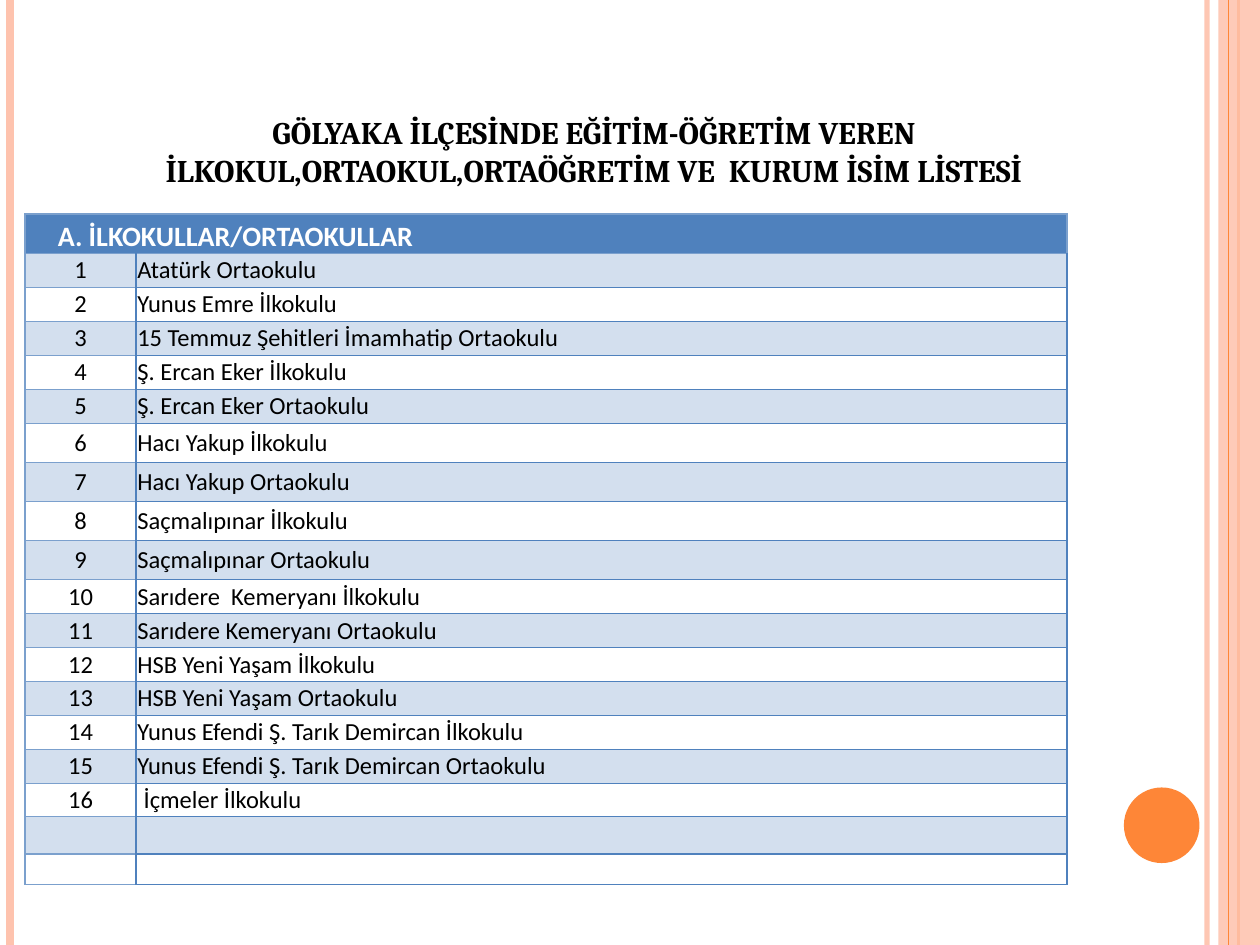
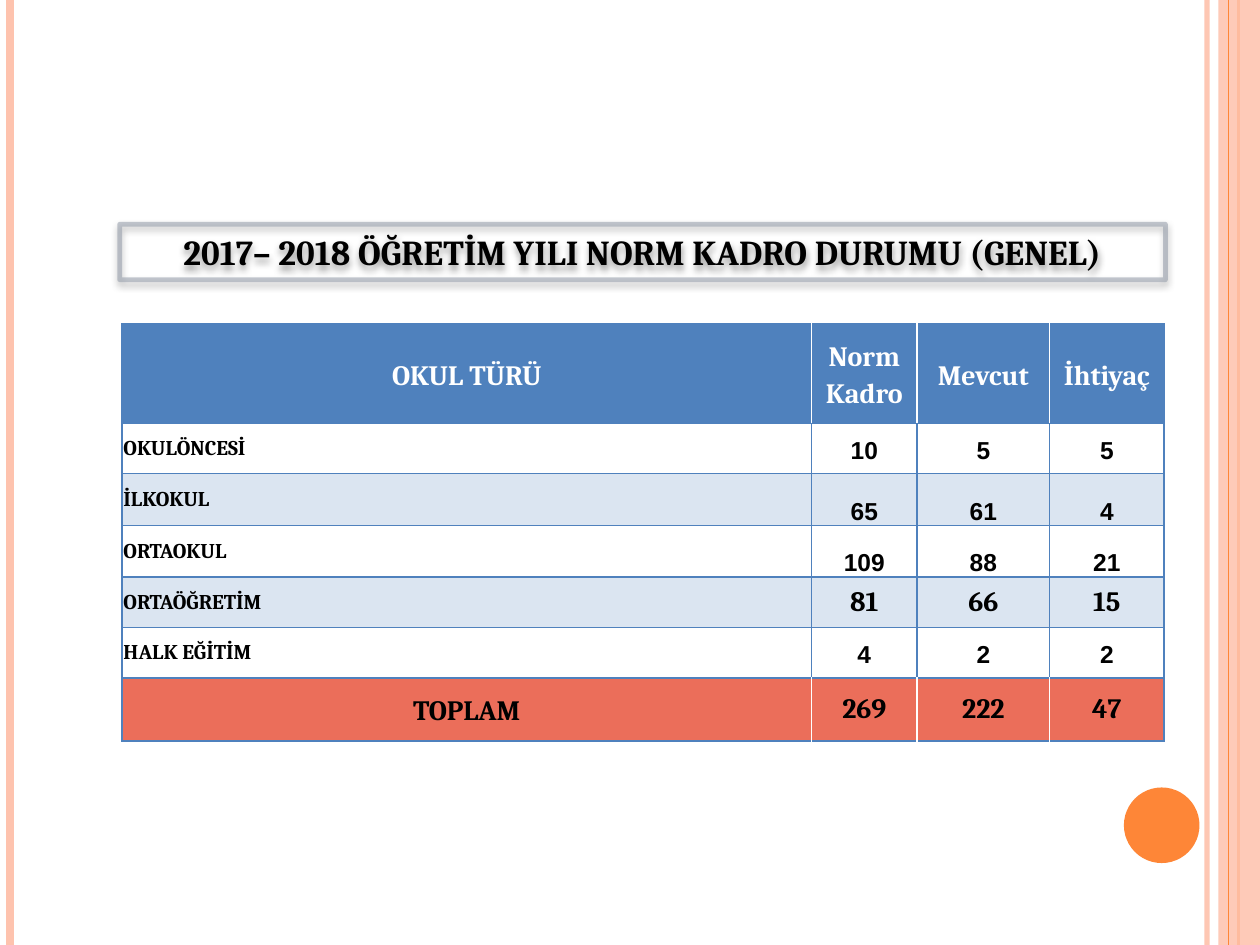
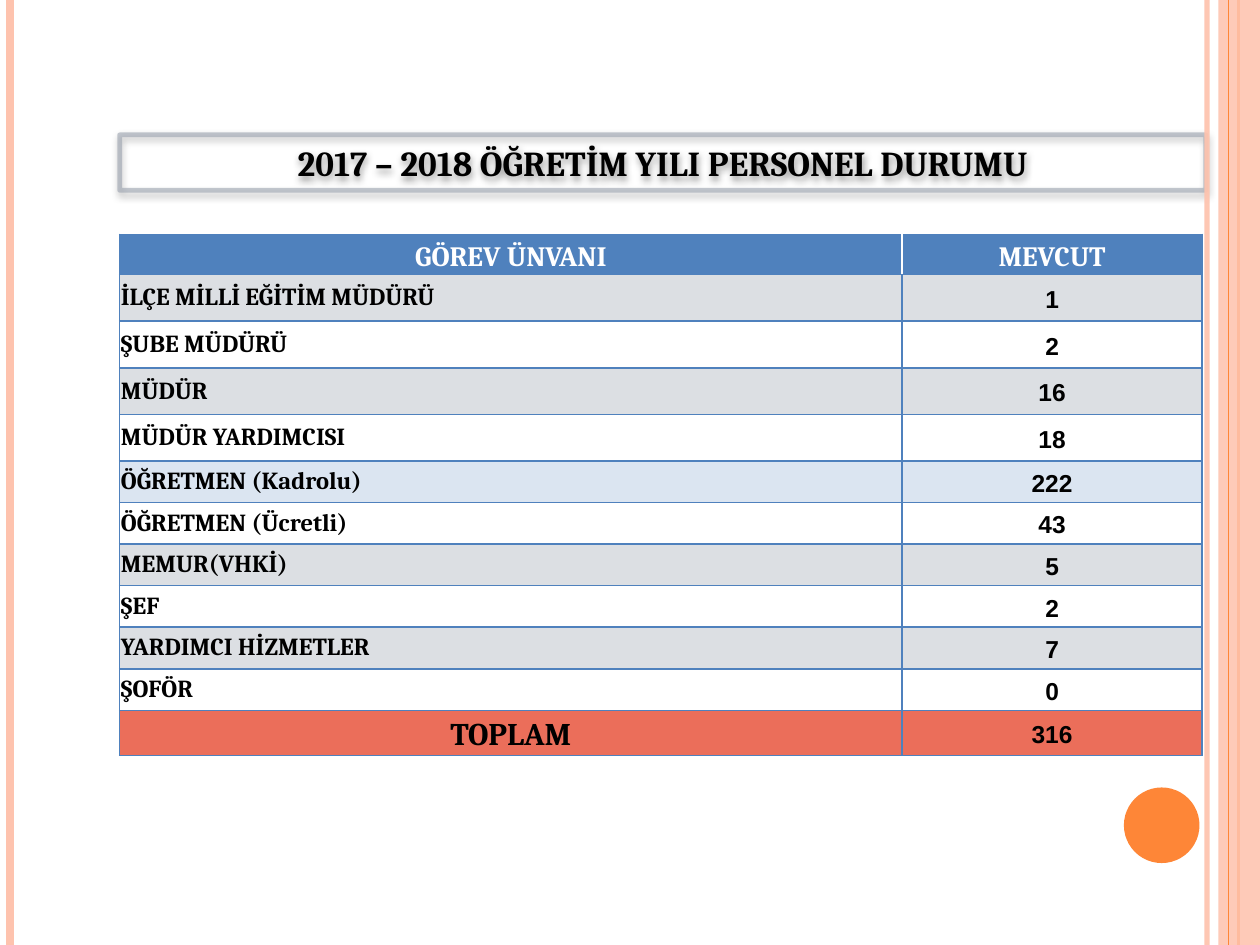
from dataclasses import dataclass

from lxml import etree
from pptx import Presentation
from pptx.dml.color import RGBColor
from pptx.enum.shapes import MSO_CONNECTOR, MSO_SHAPE
from pptx.enum.text import MSO_ANCHOR, MSO_AUTO_SIZE, PP_ALIGN
from pptx.oxml import parse_xml
from pptx.oxml.ns import nsdecls, qn
from pptx.util import Inches, Pt

STRAIGHT = MSO_CONNECTOR.STRAIGHT
RECTANGLE, OVAL = MSO_SHAPE.RECTANGLE, MSO_SHAPE.OVAL
LEFT, CENTER = PP_ALIGN.LEFT, PP_ALIGN.CENTER
MIDDLE, BOTTOM = MSO_ANCHOR.MIDDLE, MSO_ANCHOR.BOTTOM
FIXED_SIZE = MSO_AUTO_SIZE.NONE
TITLE_ONLY = 5

ORANGE, PEACH = "FE8637", "FEC3AE"
BLACK, WHITE = "000000", "FFFFFF"
BLUE, SOFT_BLUE = "4F81BD", "7BA0CD"
BAND_BLUE, PALE_BLUE, PALE_GRAY = "D3DFEE", "DBE5F1", "DCDFE3"
TOTAL_RED, FRAME_GRAY = "EB6E5A", "969EAB"

SCHOOLS = [
    "Atatürk Ortaokulu", "Yunus Emre İlkokulu",
    "15 Temmuz Şehitleri İmamhatip Ortaokulu",
    "Ş. Ercan Eker İlkokulu", "Ş. Ercan Eker Ortaokulu",
    "Hacı Yakup İlkokulu", "Hacı Yakup Ortaokulu",
    "Saçmalıpınar İlkokulu", "Saçmalıpınar Ortaokulu",
    "Sarıdere  Kemeryanı İlkokulu", "Sarıdere Kemeryanı Ortaokulu",
    "HSB Yeni Yaşam İlkokulu", "HSB Yeni Yaşam Ortaokulu",
    "Yunus Efendi Ş. Tarık Demircan İlkokulu",
    "Yunus Efendi Ş. Tarık Demircan Ortaokulu",
    "İçmeler İlkokulu",
]
STAFF_NORMS = [
    ("OKULÖNCESİ", 10, 5, 5),
    ("İLKOKUL", 65, 61, 4),
    ("ORTAOKUL", 109, 88, 21),
    ("ORTAÖĞRETİM", 81, 66, 15),
    ("HALK EĞİTİM", 4, 2, 2),
]
PERSONNEL = [
    ("İLÇE MİLLİ EĞİTİM MÜDÜRÜ", 1),
    ("ŞUBE MÜDÜRÜ", 2),
    ("MÜDÜR", 16),
    ("MÜDÜR YARDIMCISI", 18),
    ("ÖĞRETMEN (Kadrolu)", 222),
    ("ÖĞRETMEN (Ücretli)", 43),
    ("MEMUR(VHKİ)", 5),
    ("ŞEF", 2),
    ("YARDIMCI HİZMETLER", 7),
    ("ŞOFÖR", 0),
]


@dataclass
class CellStyle:
    """Text look of a table cell."""
    size: int
    font: str = "Cambria"
    color: str = BLACK
    bold: bool = True
    align: int = CENTER
    anchor: int = MIDDLE
    inset: float = 0.01
    spacing: float = 1.0


HEADER = CellStyle(16, color=WHITE, inset=0.05, spacing=1.15)
NUMBER = CellStyle(14, font="Arial", inset=0.04, spacing=1.15)
LOW_NUMBER = CellStyle(14, font="Arial", anchor=BOTTOM, spacing=1.15)
SERIF_NUMBER = CellStyle(16)
SCHOOL_HEADER = CellStyle(16, "Calibri", WHITE, align=LEFT, inset=0.06, spacing=1.15)
SCHOOL_INDEX = CellStyle(14, "Calibri", bold=False, inset=0.06)
SCHOOL_NAME = CellStyle(14, "Calibri", bold=False, align=LEFT)
LAST_SCHOOL = CellStyle(14, "Calibri", bold=False, align=LEFT, inset=0.06)


def rgb(color):
    """Turn a hex string into a colour."""
    return RGBColor.from_string(color)


def set_opacity(shape, percent):
    """Make every colour of a shape partly transparent."""
    for color in shape._element.spPr.iter(qn("a:srgbClr")):
        etree.SubElement(color, qn("a:alpha"), val=str(percent * 1000))


def add_rule(slide, x, color, width, opacity=100):
    """Draw a full-height vertical line."""
    rule = slide.shapes.add_connector(STRAIGHT, Inches(x), 0, Inches(x), Inches(7.5))
    rule.line.color.rgb = rgb(color)
    rule.line.width = Pt(width)
    set_opacity(rule, opacity)
    etree.SubElement(rule._element.spPr, qn("a:effectLst"))


def add_block(slide, preset, box, color, opacity=100):
    """Draw a filled shape without an outline."""
    block = slide.shapes.add_shape(preset, *map(Inches, box))
    block.fill.solid()
    block.fill.fore_color.rgb = rgb(color)
    block.line.fill.background()
    set_opacity(block, opacity)
    block.shadow.inherit = False


def frame_title(title):
    """Give the title a translucent outline and a soft shadow."""
    title.line.color.rgb = rgb(FRAME_GRAY)
    title.line.width = Pt(2.75)
    set_opacity(title, 57)
    title._element.spPr.append(parse_xml(
        f'<a:effectLst {nsdecls("a")}><a:outerShdw blurRad="{Pt(4)}" dist="{Pt(2)}" '
        f'dir="5400000" rotWithShape="0"><a:srgbClr val="{BLACK}">'
        '<a:alpha val="40000"/></a:srgbClr></a:outerShdw></a:effectLst>'))


def add_slide(presentation, text, box, size, framed=True):
    """Add a slide with its side bands and title."""
    slide = presentation.slides.add_slide(presentation.slide_layouts[TITLE_ONLY])
    add_rule(slide, 9.58, PEACH, 3, 93)
    add_rule(slide, 0.08, PEACH, 4.5)
    add_rule(slide, 9.83, ORANGE, 1.5)
    add_block(slide, RECTANGLE, (9.67, 0, 0.33, 7.5), PEACH, 87)
    add_rule(slide, 9.75, ORANGE, 0.75)
    add_block(slide, OVAL, (8.92, 6.25, 0.6, 0.6), ORANGE)

    title = slide.shapes.title
    title.left, title.top, title.width, title.height = map(Inches, box)
    frame = title.text_frame
    frame.text = text
    frame.word_wrap = True
    frame.auto_size = FIXED_SIZE
    frame.vertical_anchor = MIDDLE
    format_paragraph(frame.paragraphs[0], CellStyle(size))
    if framed:
        frame_title(title)
    return slide


def format_paragraph(paragraph, style):
    """Apply a text style to a paragraph."""
    paragraph.alignment = style.align
    paragraph.line_spacing = style.spacing
    paragraph.font.size = Pt(style.size)
    paragraph.font.name = style.font
    paragraph.font.bold = style.bold
    paragraph.font.color.rgb = rgb(style.color)


def set_borders(cell, left=BLUE, right=BLUE, top=BLUE, bottom=BLUE):
    """Draw the four one-point borders of a cell."""
    properties = cell._tc.get_or_add_tcPr()
    sides = {"lnL": left, "lnR": right, "lnT": top, "lnB": bottom}
    for index, (tag, color) in enumerate(sides.items()):
        properties.insert(index, parse_xml(
            f'<a:{tag} {nsdecls("a")} w="{Pt(1)}"><a:solidFill>'
            f'<a:srgbClr val="{color}"/></a:solidFill></a:{tag}>'))


def write_cell(cell, value, style, fill=None):
    """Fill a cell and write its text."""
    cell.text = str(value)
    cell.vertical_anchor = style.anchor
    cell.margin_left = cell.margin_right = Inches(style.inset)
    cell.margin_top = cell.margin_bottom = 0
    format_paragraph(cell.text_frame.paragraphs[0], style)
    if fill:
        cell.fill.solid()
        cell.fill.fore_color.rgb = rgb(fill)
    else:
        cell.fill.background()


def add_grid(slide, left, top, widths, heights):
    """Add a plain table with the given column widths and row heights."""
    table = slide.shapes.add_table(
        len(heights), len(widths), Inches(left), Inches(top),
        Inches(sum(widths)), Inches(sum(heights))).table
    table.first_row = table.horz_banding = False
    for column, width in zip(table.columns, widths):
        column.width = Inches(width)
    for row, height in zip(table.rows, heights):
        row.height = Inches(height)
    return table


def write_row(table, row, values, styles, fill, divider=BLUE):
    """Write one table row, with a colour for its inner vertical borders."""
    last = len(values) - 1
    for column, (value, style) in enumerate(zip(values, styles)):
        cell = table.cell(row, column)
        write_cell(cell, value, style, fill)
        set_borders(cell, left=divider if column else BLUE,
                    right=divider if column < last else BLUE)


def add_school_slide(presentation):
    """Build the list of schools."""
    slide = add_slide(
        presentation,
        "GÖLYAKA İLÇESİNDE EĞİTİM-ÖĞRETİM VEREN "
        "İLKOKUL,ORTAOKUL,ORTAÖĞRETİM VE  KURUM İSİM LİSTESİ",
        (0.67, 0.84, 8.09, 0.71), 18, framed=False)
    heights = [0.31] + [0.27] * 5 + [0.31] * 4 + [0.27] * 6 + [0.26, 0.3, 0.24]
    table = add_grid(slide, 0.2, 1.7, (0.88, 7.39), heights)

    header = table.cell(0, 0)
    header.merge(table.cell(0, 1))
    write_cell(header, "A. İLKOKULLAR/ORTAOKULLAR", SCHOOL_HEADER, BLUE)
    header.text_frame.paragraphs[0]._p.get_or_add_pPr().set("marL", str(Inches(0.2)))
    for cell in (header, table.cell(0, 1)):
        set_borders(cell, *[SOFT_BLUE] * 4)

    for row in range(1, len(heights)):
        fill = BAND_BLUE if row % 2 else None
        listed = row <= len(SCHOOLS)
        name_style = LAST_SCHOOL if row == len(SCHOOLS) else SCHOOL_NAME
        index_cell, name_cell = table.cell(row, 0), table.cell(row, 1)
        write_cell(index_cell, row if listed else "", SCHOOL_INDEX, fill)
        write_cell(name_cell, SCHOOLS[row - 1] if listed else "", name_style, fill)
        set_borders(index_cell, SOFT_BLUE, BLUE, SOFT_BLUE, SOFT_BLUE)
        set_borders(name_cell, top=SOFT_BLUE if row == 1 else BLUE)


def add_norm_slide(presentation):
    """Build the table of staff norms by school type."""
    slide = add_slide(presentation, "2017– 2018 ÖĞRETİM YILI NORM KADRO DURUMU (GENEL)",
                      (0.95, 1.78, 8.3, 0.44), 20)
    table = add_grid(slide, 0.97, 2.57, (5.47, 0.84, 1.05, 0.91),
                     (0.79, 0.4, 0.41, 0.41, 0.4, 0.4, 0.5))
    write_row(table, 0, ("OKUL TÜRÜ", "Norm Kadro", "Mevcut", "İhtiyaç"),
              [HEADER] * 4, BLUE, WHITE)
    label = CellStyle(12, align=LEFT)
    number_styles = (NUMBER, LOW_NUMBER, LOW_NUMBER, SERIF_NUMBER, NUMBER)
    for row, (values, style) in enumerate(zip(STAFF_NORMS, number_styles), 1):
        write_row(table, row, values, [label] + [style] * 3,
                  WHITE if row % 2 else PALE_BLUE)
    total = CellStyle(16, inset=0.05, spacing=1.15)
    write_row(table, 6, ("TOPLAM", 269, 222, 47), [total] + [SERIF_NUMBER] * 3,
              TOTAL_RED, WHITE)


def add_personnel_slide(presentation):
    """Build the table of personnel by post."""
    slide = add_slide(presentation, "2017 – 2018 ÖĞRETİM YILI PERSONEL DURUMU",
                      (0.95, 1.07, 8.62, 0.44), 20)
    table = add_grid(slide, 0.95, 1.86, (6.21, 2.38),
                     [0.32] + [0.37] * 4 + [0.33] * 6 + [0.36])
    write_row(table, 0, ("GÖREV ÜNVANI", "MEVCUT"), [HEADER] * 2, BLUE, WHITE)
    label = CellStyle(14, align=LEFT)
    for row, values in enumerate(PERSONNEL, 1):
        band = PALE_BLUE if row == 5 else PALE_GRAY
        write_row(table, row, values, (label, NUMBER), band if row % 2 else WHITE)
    write_row(table, 11, ("TOPLAM", 316), (CellStyle(18, spacing=1.15), NUMBER), TOTAL_RED)


def main():
    """Build and save the presentation."""
    presentation = Presentation()
    presentation.slide_width, presentation.slide_height = Inches(10), Inches(7.5)
    add_school_slide(presentation)
    add_norm_slide(presentation)
    add_personnel_slide(presentation)
    presentation.save("out.pptx")


if __name__ == "__main__":
    main()
